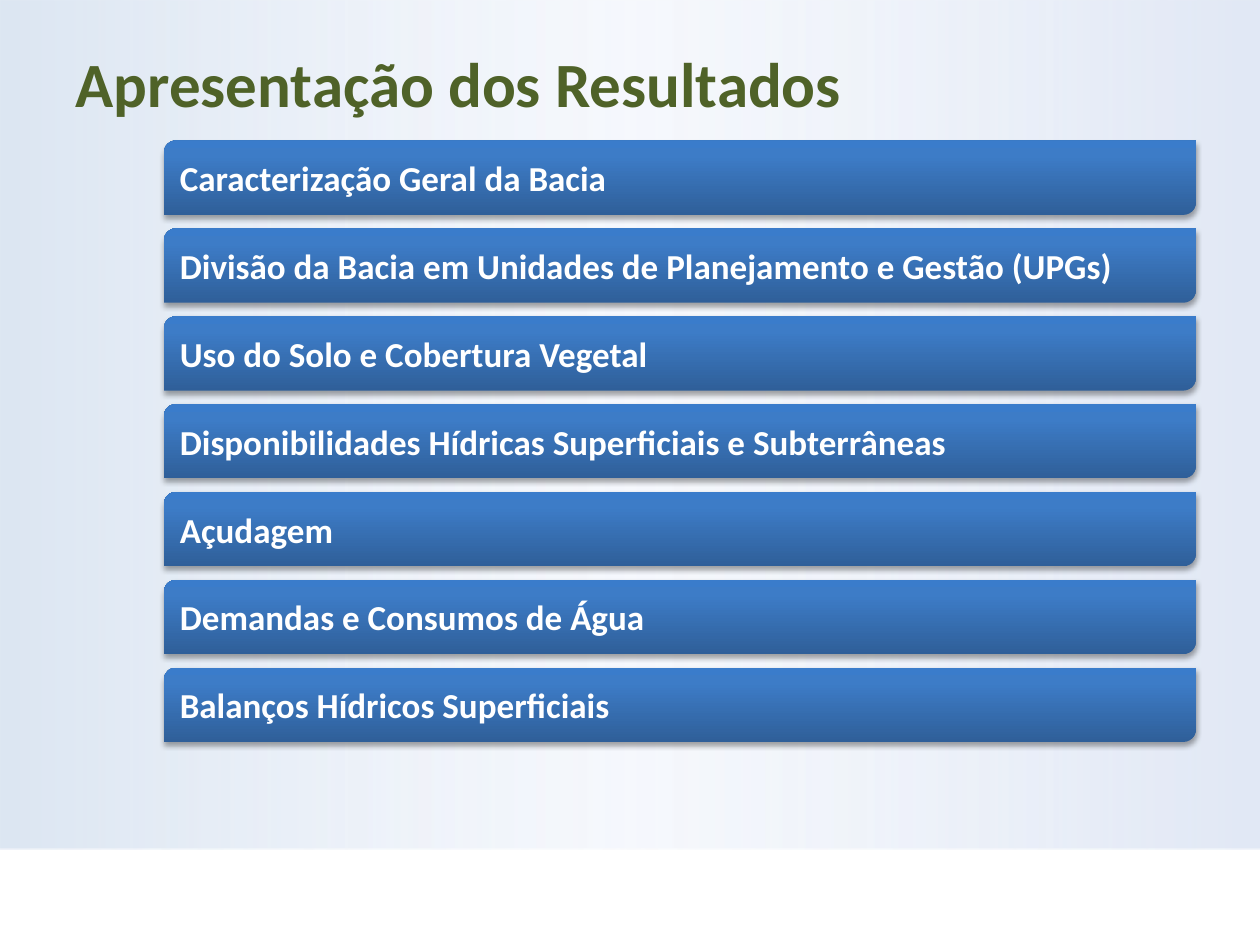
from lxml.etree import SubElement
from pptx import Presentation
from pptx.dml.color import RGBColor
from pptx.enum.shapes import MSO_SHAPE as Shape
from pptx.enum.text import MSO_ANCHOR as Anchor, MSO_AUTO_SIZE as AutoSize, PP_ALIGN as Align
from pptx.oxml.ns import qn
from pptx.util import Pt

COLORS = {
    "title": "4F6228", "text": "FFFFFF", "shadow": "000000",
    "back_left": "DCE6F2", "back_middle": "ECF1FA", "back_right": "E1E8F5",
    "bar_low": "2F5F99", "bar_high": "3D7CC7", "bar_top": "3A7CCB",
}
BACK_STOPS = [(0, "back_left", 100), (50, "back_middle", 46), (100, "back_right", 100)]
BAR_STOPS = [(0, "bar_low", 100), (80, "bar_high", 100), (100, "bar_top", 100)]
TOPICS = [
    "Caracterização Geral da Bacia",
    "Divisão da Bacia em Unidades de Planejamento e Gestão (UPGs)",
    "Uso do Solo e Cobertura Vegetal",
    "Disponibilidades Hídricas Superficiais e Subterrâneas",
    "Açudagem",
    "Demandas e Consumos de Água",
    "Balanços Hídricos Superficiais",
]
BAR_TOP, BAR_PITCH = 80.3, 50.2


def write_text(box, text, size, color, anchor=Anchor.TOP, after=0, indent=0):
    """Write one bold left-aligned paragraph into a shape."""
    frame = box.text_frame
    frame.word_wrap = True
    frame.auto_size = AutoSize.NONE
    frame.vertical_anchor = anchor
    para = frame.paragraphs[0]
    para.alignment = Align.LEFT
    para.space_after = Pt(after)
    if indent:
        properties = para._p.get_or_add_pPr()
        properties.set("marL", str(Pt(indent)))
        properties.set("indent", str(-Pt(indent)))
    span = para.add_run()
    span.text = text
    span.font.name = "Calibri"
    span.font.size = Pt(size)
    span.font.bold = True
    span.font.color.rgb = RGBColor.from_string(COLORS[color])


def add_color(parent, color, opacity):
    """Append a colour element with its opacity in percent."""
    element = SubElement(parent, qn("a:srgbClr"), val=COLORS[color])
    if opacity < 100:
        SubElement(element, qn("a:alpha"), val=str(opacity * 1000))


class SlideBuilder:
    """Hold the style and the current slide."""

    def __init__(self, deck):
        """Start a slide that has only a title."""
        self.slide = deck.slides.add_slide(deck.slide_layouts[5])

    def title(self, text, left, top, width, height):
        """Place and fill the title placeholder."""
        box = self.slide.shapes.title
        box.left, box.top, box.width, box.height = map(Pt, (left, top, width, height))
        write_text(box, text, 36, "title")

    def panel(self, kind, left, top, width, height, stops, angle):
        """Add a borderless shape with a linear gradient."""
        box = self.slide.shapes.add_shape(kind, *map(Pt, (left, top, width, height)))
        box.shadow.inherit = False
        box.line.fill.background()
        box.fill.gradient()
        gradient = box._element.spPr.find(qn("a:gradFill"))
        for child in list(gradient):
            gradient.remove(child)
        stop_list = SubElement(gradient, qn("a:gsLst"))
        for position, color, opacity in stops:
            stop = SubElement(stop_list, qn("a:gs"), pos=str(position * 1000))
            add_color(stop, color, opacity)
        SubElement(gradient, qn("a:lin"), ang=str(angle * 60000), scaled="0")
        return box

    def background(self, width, height):
        """Add the gradient area behind all other elements."""
        box = self.panel(Shape.RECTANGLE, 0, 0, width, height, BACK_STOPS, 0)
        self.slide.shapes._spTree.insert(2, box._element)

    def bar(self, text, left, top, width, height):
        """Add a topic bar with a soft shadow."""
        box = self.panel(Shape.ROUND_2_DIAG_RECTANGLE, left, top, width, height, BAR_STOPS, 270)
        effects = box._element.spPr.find(qn("a:effectLst"))
        shadow = SubElement(effects, qn("a:outerShdw"), blurRad=str(Pt(3.1)),
                            dist=str(Pt(1.8)), dir=str(90 * 60000), rotWithShape="0")
        add_color(shadow, "shadow", 35)
        write_text(box, text, 20, "text", anchor=Anchor.MIDDLE, after=6, indent=36)


def main():
    """Build and save the slide."""
    deck = Presentation()
    deck.slide_width, deck.slide_height = Pt(720), Pt(540)
    builder = SlideBuilder(deck)
    builder.background(720, 485.3)
    builder.title("Apresentação dos Resultados", 36, 21.6, 648, 61.2)
    for row, topic in enumerate(TOPICS):
        builder.bar(topic, 93.6, BAR_TOP + row * BAR_PITCH, 589.7, 42.5)
    deck.save("out.pptx")


if __name__ == "__main__":
    main()
